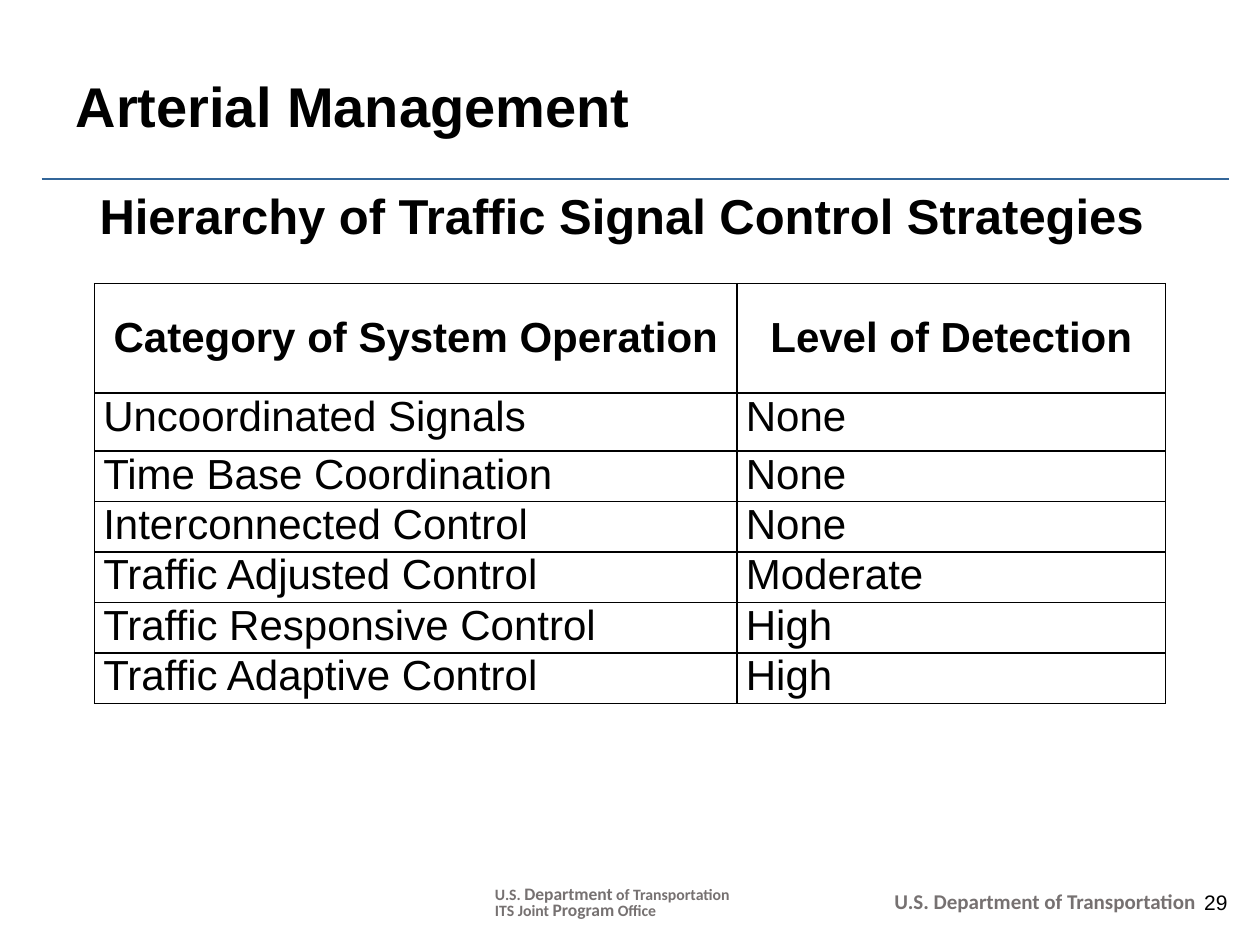
"""Build the arterial management slide with its table of signal control strategies."""
import pptx
import pptx.dml.color
import pptx.enum.shapes
import pptx.enum.text
import pptx.oxml
import pptx.oxml.ns
import pptx.util

Inches = pptx.util.Inches
Pt = pptx.util.Pt
ALIGN = pptx.enum.text.PP_ALIGN
ANCHOR = pptx.enum.text.MSO_ANCHOR
BLACK = "000000"
GRAY = "767171"
BLUE = "336699"

COLUMN_WIDTHS = [5.1, 3.4]
ROW_HEIGHTS = [0.87, 0.46] + [0.37] * 4 + [0.4]
STRATEGIES = [
    ("Category of System Operation", "Level of Detection"),
    ("Uncoordinated Signals", "None"),
    ("Time Base Coordination", "None"),
    ("Interconnected Control", "None"),
    ("Traffic Adjusted Control", "Moderate"),
    ("Traffic Responsive Control", "High"),
    ("Traffic Adaptive Control", "High"),
]


def color(value):
    return pptx.dml.color.RGBColor.from_string(value)


def element(tag, **attributes):
    new_element = pptx.oxml.parse_xml(f"<a:{tag} {pptx.oxml.ns.nsdecls('a')}/>")
    for name, value in attributes.items():
        new_element.set(name, str(value))
    return new_element


def write(paragraph, text, size=12, font="Arial", fill=BLACK, bold=False,
          align=ALIGN.LEFT, spacing=None):
    paragraph.alignment = align
    if spacing:
        paragraph.line_spacing = Pt(spacing)
    run = paragraph.add_run()
    run.text = text
    run.font.size = Pt(size)
    run.font.name = font
    run.font.bold = bold
    run.font.color.rgb = color(fill)


def place(shape, left, top, width, height):
    shape.left, shape.top = Inches(left), Inches(top)
    shape.width, shape.height = Inches(width), Inches(height)


def fill_placeholder(shape, box, text, size, anchor):
    place(shape, *box)
    frame = shape.text_frame
    frame.auto_size = pptx.enum.text.MSO_AUTO_SIZE.NONE
    frame.vertical_anchor = anchor
    write(frame.paragraphs[0], text, size=size, bold=True)
    return frame.paragraphs[0]


def add_text_box(slide, left, top, width, height):
    box = slide.shapes.add_textbox(
        Inches(left), Inches(top), Inches(width), Inches(height))
    box.text_frame.word_wrap = True
    return box.text_frame


def add_rule(slide, left, right, top):
    rule = slide.shapes.add_connector(
        pptx.enum.shapes.MSO_CONNECTOR.STRAIGHT,
        Inches(left), Inches(top), Inches(right), Inches(top))
    rule.line.color.rgb = color(BLUE)
    rule.line.width = Pt(1.5)
    rule._element.spPr.append(element("effectLst"))


def add_borders(cell):
    properties = cell._tc.get_or_add_tcPr()
    for position, side in enumerate(("lnL", "lnR", "lnT", "lnB")):
        border = element(side, w=Pt(1))
        fill = element("solidFill")
        fill.append(element("srgbClr", val=BLACK))
        border.append(fill)
        properties.insert(position, border)


def format_cell(cell, text, header):
    cell.fill.background()
    cell.margin_left = cell.margin_right = Inches(0.07)
    cell.margin_top = cell.margin_bottom = 0
    cell.vertical_anchor = ANCHOR.MIDDLE if header else ANCHOR.TOP
    write(cell.text_frame.paragraphs[0], text, size=24, bold=header,
          align=ALIGN.CENTER if header else ALIGN.LEFT)
    add_borders(cell)


def add_strategy_table(slide):
    table = slide.shapes.add_table(
        len(STRATEGIES), len(COLUMN_WIDTHS), Inches(0.75), Inches(2.25),
        Inches(sum(COLUMN_WIDTHS)), Inches(sum(ROW_HEIGHTS))).table
    table.horz_banding = False
    for column, width in zip(table.columns, COLUMN_WIDTHS):
        column.width = Inches(width)
    for row_index, (row, height) in enumerate(zip(table.rows, ROW_HEIGHTS)):
        row.height = Inches(height)
        for cell, text in zip(row.cells, STRATEGIES[row_index]):
            format_cell(cell, text, header=row_index == 0)


def add_footer(slide):
    number = add_text_box(slide, 9.32, 7.01, 0.52, 0.3)
    write(number.paragraphs[0], "29", align=ALIGN.RIGHT)

    gray_bold = {"font": "Calibri", "fill": GRAY, "bold": True, "spacing": 9}
    department = add_text_box(slide, 7, 7.08, 2.75, 0.24)
    write(department.paragraphs[0], "U.S. Department of Transportation", **gray_bold)

    office = add_text_box(slide, 3.83, 7, 2.07, 0.36)
    office.add_paragraph()
    lines = [("U.S. ", "Department", " of Transportation"),
             ("ITS Joint ", "Program", " Office")]
    for paragraph, parts in zip(office.paragraphs, lines):
        for text, size in zip(parts, (9, 10, 9)):
            write(paragraph, text, size=size, **gray_bold)


def main():
    presentation = pptx.Presentation()
    presentation.slide_width, presentation.slide_height = Inches(10), Inches(7.5)
    slide = presentation.slides.add_slide(presentation.slide_layouts[1])
    add_rule(slide, 0.33, 9.75, 1.42)
    add_footer(slide)
    fill_placeholder(slide.shapes.title, (0.5, 0.42, 9, 0.83),
                     "Arterial Management", 32, ANCHOR.MIDDLE)
    heading = fill_placeholder(slide.placeholders[1], (0.5, 1.42, 9, 4.95),
                               "Hierarchy of Traffic Signal Control Strategies",
                               28, ANCHOR.TOP)
    heading.space_before = Pt(0)
    properties = heading._p.get_or_add_pPr()
    properties.set("marL", str(Inches(0.19)))
    properties.set("indent", "0")
    properties.append(element("buNone"))
    add_strategy_table(slide)
    presentation.save("out.pptx")


if __name__ == "__main__":
    main()
